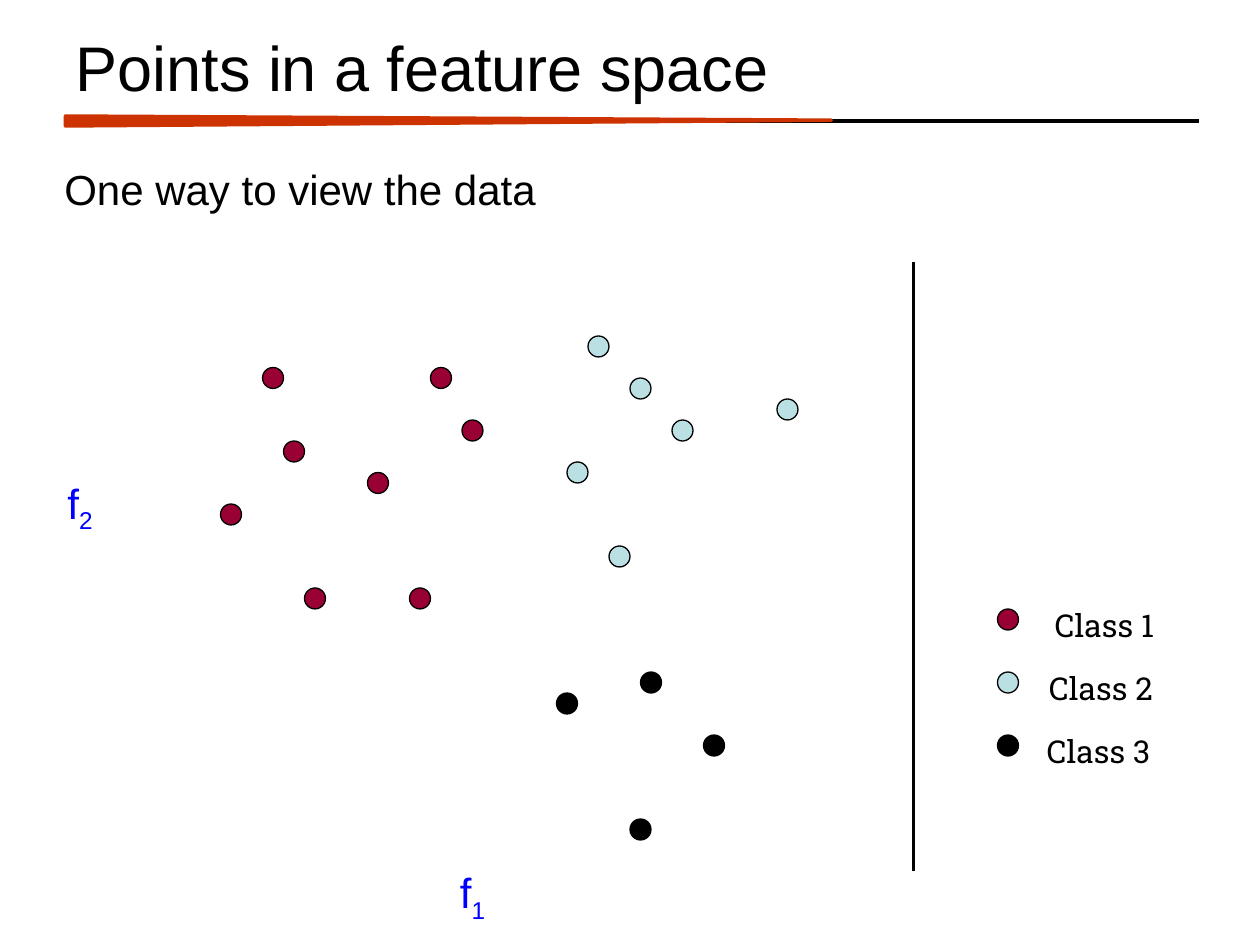
import pptx
import pptx.dml.color
import pptx.enum.shapes
import pptx.enum.text
import pptx.oxml
import pptx.oxml.ns
import pptx.util
from pptx.util import Cm

BLACK = pptx.dml.color.RGBColor(0x00, 0x00, 0x00)
ORANGE = pptx.dml.color.RGBColor(0xCC, 0x33, 0x00)
BLUE = pptx.dml.color.RGBColor(0x00, 0x00, 0xFF)
CRIMSON = pptx.dml.color.RGBColor(0x99, 0x00, 0x33)
PALE_BLUE = pptx.dml.color.RGBColor(0xBB, 0xE0, 0xE3)

GRID = Cm(2.54) // 12
DOT = 2 * GRID

CLASSES = [
    ("Class 1", CRIMSON, Cm(0.76),
     [(25, 35), (27, 42), (29, 56), (41, 35), (21, 48), (35, 45), (44, 40), (39, 56)]),
    ("Class 2", PALE_BLUE, Cm(0.69),
     [(54, 44), (56, 32), (58, 52), (60, 36), (74, 38), (64, 40)]),
    ("Class 3", BLACK, Cm(0.64),
     [(61, 64), (53, 66), (60, 78), (67, 70)]),
]


def add_span(para, text, size, font, color):
    """Add one formatted run to a paragraph and return it."""
    span = para.add_run()
    span.text = text
    span.font.size = pptx.util.Pt(size)
    span.font.name = font
    span.font.color.rgb = color
    return span


def add_label(page, left, top, width, height, wrap=True):
    """Add a centred text box and return its paragraph."""
    box = page.shapes.add_textbox(left, top, width, height)
    box.text_frame.word_wrap = wrap
    box.text_frame.auto_size = pptx.enum.text.MSO_AUTO_SIZE.SHAPE_TO_FIT_TEXT
    para = box.text_frame.paragraphs[0]
    para.alignment = pptx.enum.text.PP_ALIGN.CENTER
    return para


def add_line(page, start, end, weight):
    """Draw a straight black line without a shadow."""
    line = page.shapes.add_connector(
        pptx.enum.shapes.MSO_CONNECTOR.STRAIGHT, *start, *end)
    line.line.color.rgb = BLACK
    line.line.width = pptx.util.Pt(weight)
    properties = line._element.spPr
    properties.append(pptx.oxml.parse_xml(
        "<a:effectLst %s/>" % pptx.oxml.ns.nsdecls("a")))


def add_solid(page, kind, box, fill, outline, weight):
    """Add a filled and outlined preset shape."""
    shape = page.shapes.add_shape(kind, *box)
    shape.shadow.inherit = False
    shape.fill.solid()
    shape.fill.fore_color.rgb = fill
    shape.line.color.rgb = outline
    shape.line.width = pptx.util.Pt(weight)
    return shape


def add_dot(page, left, top, color):
    """Add one data point."""
    add_solid(page, pptx.enum.shapes.MSO_SHAPE.OVAL,
              (left, top, DOT, DOT), color, BLACK, 0.75)


def add_header(page, left, top, width, height):
    """Place the title and the tapered rule below it."""
    rule_left, rule_y = left + Cm(0.05), top + Cm(2.01)
    add_line(page, (rule_left, rule_y), (rule_left + Cm(22.86), rule_y), 2)
    length, thickness = Cm(15.44), Cm(0.2)
    wedge_box = (rule_left + (length - thickness) // 2, rule_y - length // 2,
                 thickness, length)
    wedge = add_solid(page, pptx.enum.shapes.MSO_SHAPE.ISOSCELES_TRIANGLE,
                      wedge_box, ORANGE, ORANGE, 2)
    wedge.adjustments[0] = 0.42
    wedge.rotation = 90

    title = page.shapes.title
    title.left, title.top, title.width, title.height = left, top, width, height
    frame = title.text_frame
    frame.auto_size = pptx.enum.text.MSO_AUTO_SIZE.NONE
    frame.vertical_anchor = pptx.enum.text.MSO_ANCHOR.MIDDLE
    para = frame.paragraphs[0]
    para.alignment = pptx.enum.text.PP_ALIGN.LEFT
    add_span(para, "Points in a feature space", 36, "Arial", BLACK)


def add_axis_name(page, left, top, index):
    """Write a feature name with its subscript index."""
    para = add_label(page, left, top, Cm(3.39), Cm(1.27))
    add_span(para, "f", 24, "Arial", BLUE)
    subscript = add_span(para, index, 24, "Arial", BLUE)
    subscript.font._element.set("baseline", "-25000")


def add_scatter(page, left, top):
    """Place the points on the grid and name both features."""
    for name, color, indent, points in CLASSES:
        for column, row in points:
            add_dot(page, left + column * GRID, top + row * GRID, color)
    add_axis_name(page, left + Cm(7.83), top + Cm(17.35), "1")
    add_axis_name(page, left - Cm(0.08), top + Cm(9.5), "2")


def add_legend(page, left, top, pitch):
    """List the classes with their colours."""
    for row, (name, color, indent, points) in enumerate(CLASSES):
        y = top + row * pitch
        add_dot(page, left, y, color)
        para = add_label(page, left + indent, y - Cm(0.18), Cm(2.79), Cm(0.89), False)
        add_span(para, name, 18, "Roboto Slab", BLACK)


def main():
    """Build and save the deck."""
    deck = pptx.Presentation()
    deck.slide_width, deck.slide_height = Cm(25.4), Cm(19.05)
    page = deck.slides.add_slide(deck.slide_layouts[5])
    add_header(page, Cm(1.27), Cm(0.43), Cm(22.86), Cm(1.83))
    para = add_label(page, Cm(-1.47), Cm(3.18), Cm(15.04), Cm(1.27))
    add_span(para, "One way to view the data", 24, "Arial", BLACK)
    add_scatter(page, Cm(0), Cm(0))
    add_line(page, (87 * GRID, 25 * GRID), (87 * GRID, 83 * GRID), 2.25)
    add_legend(page, 95 * GRID, 58 * GRID, 6 * GRID)
    deck.save("out.pptx")


if __name__ == "__main__":
    main()
